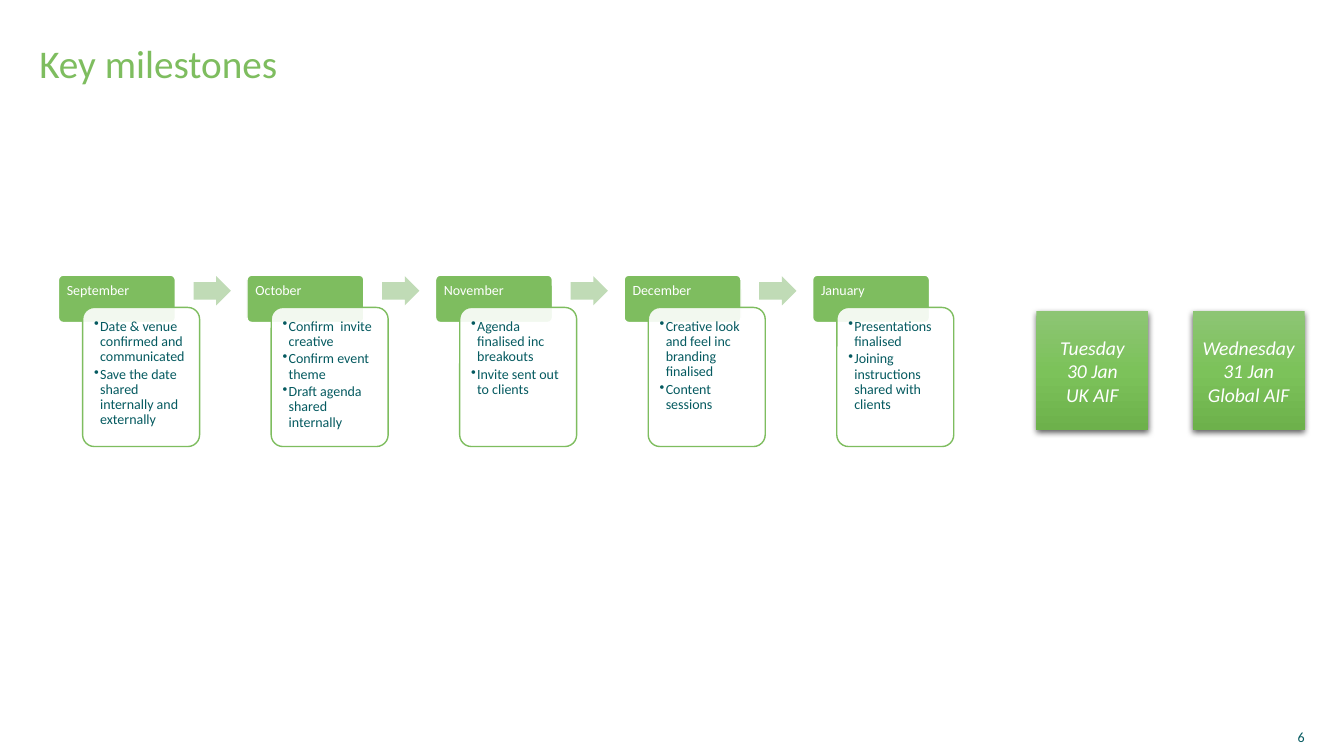
import copy

import pptx
import pptx.dml.color
import pptx.enum.shapes
import pptx.enum.text
import pptx.oxml.ns
import pptx.util
from lxml import etree

Inches = pptx.util.Inches
Pt = pptx.util.Pt
qn = pptx.oxml.ns.qn
SHAPE = pptx.enum.shapes.MSO_SHAPE
ALIGN = pptx.enum.text.PP_ALIGN
ANCHOR = pptx.enum.text.MSO_ANCHOR

GREEN, PALE_GREEN, TEAL, WHITE = "7EBD5F", "C0DBB6", "055A60", "FFFFFF"


def color(value):
    return pptx.dml.color.RGBColor.from_string(value)


def write(box, lines, insets, anchor, para_format, font_format, ink, bullet=False):
    frame = box.text_frame
    frame.word_wrap = True
    frame.vertical_anchor = anchor
    for side, inset in zip(("left", "top", "right", "bottom"), insets):
        setattr(frame, f"margin_{side}", Inches(inset))
    for index, line in enumerate(lines):
        para = frame.paragraphs[0] if index == 0 else frame.add_paragraph()
        if bullet:
            properties = para._p.get_or_add_pPr()
            properties.set("marL", str(Inches(0.06)))
            properties.set("indent", str(-Inches(0.06)))
            etree.SubElement(properties, qn("a:buChar"), char="•")
        for name, value in para_format.items():
            setattr(para, name, value)
        span = para.add_run()
        span.text = line
        for name, value in {"name": "Calibri", **font_format}.items():
            setattr(span.font, name, value)
        span.font.color.rgb = color(ink)


deck = pptx.Presentation()
deck.slide_width, deck.slide_height = Inches(13.33), Inches(7.5)
page = deck.slides.add_slide(deck.slide_layouts[6])

# Title and page number
title = page.shapes.add_textbox(Inches(0.39), Inches(0.39), Inches(12.55), Inches(0.55))
write(title, ["Key milestones"], (0, 0.05, 0, 0.05), ANCHOR.TOP,
      {"line_spacing": 0.9}, {"size": Pt(28)}, GREEN)
number = page.shapes.add_textbox(Inches(11.04), Inches(7.12), Inches(1.9), Inches(0.38))
write(number, ["6"], (0.1, 0.05, 0, 0.05), ANCHOR.MIDDLE,
      {"alignment": ALIGN.RIGHT}, {"size": Pt(10)}, TEAL)

# Month by month process
milestones = {
    "September": ["Date & venue confirmed and communicated",
                  "Save the date shared internally and externally"],
    "October": ["Confirm  invite creative", "Confirm event theme",
                "Draft agenda shared internally"],
    "November": ["Agenda finalised inc breakouts", "Invite sent out to clients"],
    "December": ["Creative look and feel inc branding finalised", "Content sessions"],
    "January": ["Presentations finalised", "Joining instructions shared with clients"],
}
month_format = {"alignment": ALIGN.LEFT, "line_spacing": 0.9}
for index, (month, tasks) in enumerate(milestones.items()):
    left = 0.58 + 1.87 * index

    header = page.shapes.add_shape(SHAPE.ROUNDED_RECTANGLE, Inches(left), Inches(2.73),
                                   Inches(1.16), Inches(0.47))
    card = page.shapes.add_shape(SHAPE.ROUNDED_RECTANGLE, Inches(left + 0.24), Inches(3.05),
                                 Inches(1.16), Inches(1.38))
    for box, fill, line in ((header, GREEN, WHITE), (card, WHITE, GREEN)):
        box.shadow.inherit = False
        box.adjustments[0] = 0.1
        box.fill.solid()
        box.fill.fore_color.rgb = color(fill)
        box.line.color.rgb = color(line)
        box.line.width = Pt(1)
    card_fill = card._element.spPr.find(qn("a:solidFill")).find(qn("a:srgbClr"))
    etree.SubElement(card_fill, qn("a:alpha"), val="90000")

    write(header, [month], (0.07, 0.07, 0.07, 0.04), ANCHOR.TOP,
          month_format, {"size": Pt(10)}, WHITE)
    write(card, tasks, (0.08, 0.08, 0.08, 0.08), ANCHOR.TOP,
          {**month_format, "space_after": Pt(1.8)}, {"size": Pt(10)}, TEAL, bullet=True)

    if index < len(milestones) - 1:
        arrow = page.shapes.add_shape(SHAPE.RIGHT_ARROW, Inches(left + 1.34), Inches(2.74),
                                      Inches(0.37), Inches(0.29))
        arrow.shadow.inherit = False
        arrow.adjustments[0] = 0.6
        arrow.fill.solid()
        arrow.fill.fore_color.rgb = color(PALE_GREEN)
        arrow.line.fill.background()

# Event days
events = [(10.28, ["Tuesday", "30 Jan", "UK AIF"]),
          (11.83, ["Wednesday 31 Jan", "Global AIF"])]
for left, lines in events:
    event = page.shapes.add_shape(SHAPE.RECTANGLE, Inches(left), Inches(3.09),
                                  Inches(1.11), Inches(1.18))
    event.line.fill.background()

    # Three-stop gradient, light at the top
    event.fill.gradient()
    event.fill.gradient_angle = 270
    stop_list = event._element.spPr.find(qn("a:gradFill")).find(qn("a:gsLst"))
    stop_list.insert(1, copy.deepcopy(stop_list[0]))
    stops = ((0, "8DC574"), (0.5, "7CC25A"), (1, "6DB14B"))
    for stop, (position, shade) in zip(event.fill.gradient_stops, stops):
        stop.position = position
        stop.color.rgb = color(shade)

    # Soft shadow below
    event.shadow.inherit = False
    effects = event._element.spPr.find(qn("a:effectLst"))
    shadow = etree.SubElement(effects, qn("a:outerShdw"), blurRad=str(Pt(4.5)),
                              dist=str(Pt(1.5)), dir="5400000", algn="ctr", rotWithShape="0")
    shade = etree.SubElement(shadow, qn("a:srgbClr"), val="000000")
    etree.SubElement(shade, qn("a:alpha"), val="63000")

    write(event, lines, (0, 0, 0, 0), ANCHOR.MIDDLE,
          {"alignment": ALIGN.CENTER}, {"size": Pt(14), "italic": True}, WHITE)

deck.save("out.pptx")
